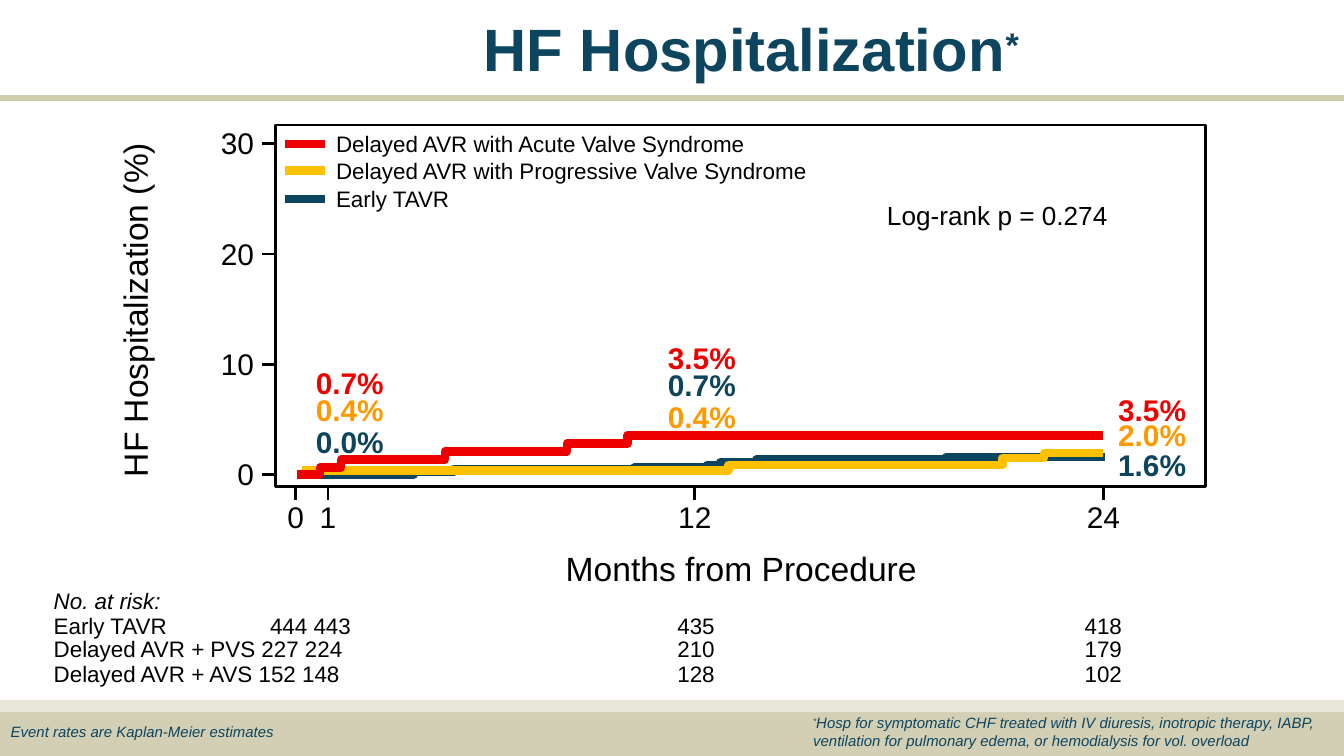
"""Builds the HF hospitalization slide with Kaplan-Meier curves and numbers at risk."""
from lxml.etree import SubElement
from pptx import Presentation
from pptx.dml.color import RGBColor
from pptx.enum.shapes import MSO_CONNECTOR as Connector, MSO_SHAPE as Shape
from pptx.enum.text import PP_ALIGN as Align
from pptx.oxml.ns import qn
from pptx.util import Inches, Pt

COLORS = {
    "navy": "0D445E", "red": "ED0000", "yellow": "FFC000", "orange": "FF9900",
    "black": "000000", "sand": "D2CFB5", "pale": "E9E7DA", "rule": "D0CDAE",
}
BANDS = [(5.3, 0.33, "sand"), (5.21, 0.09, "pale")]
FRAME = (2.05, 0.93, 8.97, 3.62)
TICK = 0.1
ZERO_Y, INCHES_PER_TEN_PERCENT = 3.53, 0.82
PERCENT_TICKS = [30, 20, 10, 0]
MONTH_TICKS = {"0": 2.2, "1": 2.44, "12": 5.17, "24": 8.21}

CURVES = [
    ("navy", (2.32, 3.53), [(3.08, 3.51), (3.38, 3.49), (4.72, 3.48), (5.26, 3.46),
                            (5.36, 3.44), (5.63, 3.42), (7.04, 3.4)], 8.22),
    ("yellow", (2.25, 3.5), [(5.42, 3.46), (7.46, 3.41), (7.77, 3.37)], 8.21),
    ("red", (2.21, 3.53), [(2.38, 3.48), (2.54, 3.42), (3.31, 3.36), (4.22, 3.3),
                           (4.67, 3.24)], 8.21),
]
LEGEND = [
    ("Delayed AVR with Acute Valve Syndrome", "red", 1.07),
    ("Delayed AVR with Progressive Valve Syndrome", "yellow", 1.27),
    ("Early TAVR", "navy", 1.48),
]
RATES = [
    ((2.35, 2.74), [("0.7%", "red", 17.1), ("0.4%", "orange", 14.8), ("0.0%", "navy", 16.8)]),
    ((4.97, 2.55), [("3.5%", "red", 17.4), ("0.7%", "navy", 14.9), ("0.4%", "orange", 16.8)]),
    ((8.32, 2.95), [("3.5%", "red", 16.5), ("2.0%", "orange", 13.4), ("1.6%", "navy", 16.1)]),
]
RISK_SPACING = [13.3, 12.3, 13.3]
RISK_TAB = 1.61
RISK_COLUMNS = [
    (0.4, 2.26, ["Early TAVR\t444 443", "Delayed AVR + PVS 227 224",
                 "Delayed AVR + AVS 152 148"]),
    (5.04, 0.31, ["435", "210", "128"]),
    (8.07, 0.31, ["418", "179", "102"]),
]
FOOTNOTE = ("Hosp for symptomatic CHF treated with IV diuresis, inotropic therapy, IABP, "
            "ventilation for pulmonary edema, or hemodialysis for vol. overload")


def rgb(name):
    return RGBColor.from_string(COLORS[name])


def style_line(shape, color, width):
    shape.line.color.rgb = rgb(color)
    shape.line.width = Pt(width)


def add_line(slide, start, end, color, width):
    line = slide.shapes.add_connector(Connector.STRAIGHT, *map(Inches, start + end))
    style_line(line, color, width)
    SubElement(line._element.spPr, qn("a:effectLst"))


def add_band(slide, top, height, color):
    band = slide.shapes.add_shape(Shape.RECTANGLE, 0, Inches(top), Inches(10), Inches(height))
    band.shadow.inherit = False
    band.fill.solid()
    band.fill.fore_color.rgb = rgb(color)
    band.line.fill.background()


def add_frame(slide):
    left, top, right, bottom = FRAME
    box = map(Inches, (left, top, right - left, bottom - top))
    frame = slide.shapes.add_shape(Shape.RECTANGLE, *box)
    frame.shadow.inherit = False
    frame.fill.background()
    style_line(frame, "black", 1.5)


def add_curve(slide, color, start, steps, end):
    level, points = start[1], []
    for x, y in steps:
        points += [(x, level), (x, y)]
        level = y
    points.append((end, level))
    builder = slide.shapes.build_freeform(*map(Inches, start))
    builder.add_line_segments([(Inches(x), Inches(y)) for x, y in points], close=False)
    curve = builder.convert_to_shape()
    curve.shadow.inherit = False
    curve.fill.background()
    style_line(curve, color, 4.5)


def add_tab(paragraph, position):
    tabs = SubElement(paragraph._p.get_or_add_pPr(), qn("a:tabLst"))
    SubElement(tabs, qn("a:tab"), pos=str(Inches(position)), algn="l")


def add_text(slide, box, lines, size, align=Align.LEFT, bold=None, italic=None):
    """Adds a text box; each line is (text, color, exact spacing in points or None)."""
    shape = slide.shapes.add_textbox(*map(Inches, box))
    frame = shape.text_frame
    frame.word_wrap = True
    frame.margin_left = frame.margin_top = frame.margin_right = frame.margin_bottom = 0
    for index, (text, color, spacing) in enumerate(lines):
        paragraph = frame.add_paragraph() if index else frame.paragraphs[0]
        paragraph.add_run().text = text
        paragraph.alignment = align
        if spacing:
            paragraph.line_spacing = Pt(spacing)
        if "\t" in text:
            add_tab(paragraph, RISK_TAB)
        font = paragraph.font
        font.name, font.size, font.bold, font.italic = "Arial", Pt(size), bold, italic
        font.color.rgb = rgb(color)
    return frame


def add_label(slide, box, text, size, color="black", **style):
    return add_text(slide, box, [(text, color, None)], size, **style)


def raise_run(run, percent):
    run._r.get_or_add_rPr().set("baseline", str(percent * 1000))


def add_axes(slide):
    left, top, right, bottom = FRAME
    add_frame(slide)
    for percent in PERCENT_TICKS:
        y = ZERO_Y - percent / 10 * INCHES_PER_TEN_PERCENT
        add_line(slide, (left - TICK, y), (left, y), "black", 1.5)
        add_label(slide, (1.59, y - 0.14, 0.3, 0.28), str(percent), 16, align=Align.RIGHT)
    for month, x in MONTH_TICKS.items():
        add_line(slide, (x, bottom), (x, bottom + TICK), "black", 1.5)
        add_label(slide, (x - 0.15, 3.71, 0.3, 0.28), month, 16, align=Align.CENTER)
    add_label(slide, (4.21, 4.08, 2.7, 0.3), "Months from Procedure", 18)
    title = add_label(slide, (0.85, 1.04, 0.31, 2.51), "HF Hospitalization (%)", 18)
    title._txBody.bodyPr.set("vert", "vert270")


def add_risk_numbers(slide):
    add_label(slide, (0.4, 4.37, 0.9, 0.2), "No. at risk:", 12, italic=True)
    for left, width, rows in RISK_COLUMNS:
        lines = [(row, "black", spacing) for row, spacing in zip(rows, RISK_SPACING)]
        add_text(slide, (left, 4.57, width, 0.55), lines, 12)


def add_notes(slide):
    add_label(slide, (0.08, 5.38, 2, 0.15), "Event rates are Kaplan-Meier estimates", 8,
              "navy", italic=True)
    note = add_label(slide, (6.05, 5.31, 3.81, 0.28), "*", 8, "navy", italic=True)
    star = note.paragraphs[0].runs[0]
    star.font.size = Pt(7.5)
    raise_run(star, 28)
    note.paragraphs[0].add_run().text = FOOTNOTE


def main():
    presentation = Presentation()
    presentation.slide_width = Inches(10)
    presentation.slide_height = presentation.slide_width * 9 // 16
    slide = presentation.slides.add_slide(presentation.slide_layouts[6])

    for band in BANDS:
        add_band(slide, *band)
    add_line(slide, (0, 0.73), (10, 0.73), "rule", 3)
    title = add_label(slide, (3.6, 0.09, 6.29, 0.6), "HF Hospitalization", 32, "navy", bold=True)
    star = title.paragraphs[0].add_run()
    star.text = "*"
    star.font.size = Pt(31.5)
    raise_run(star, 25)

    add_axes(slide)
    for (left, top), lines in RATES:
        add_text(slide, (left, top, 0.53, 0.68), lines, 16, bold=True)
    for curve in CURVES:
        add_curve(slide, *curve)
    for text, color, y in LEGEND:
        add_line(slide, (2.12, y), (2.42, y), color, 4.5)
        add_label(slide, (2.5, y - 0.1, 3.51, 0.2), text, 12)
    add_label(slide, (6.6, 1.48, 1.7, 0.25), "Log-rank p = 0.274", 14)
    add_risk_numbers(slide)
    add_notes(slide)
    presentation.save("out.pptx")


if __name__ == "__main__":
    main()
